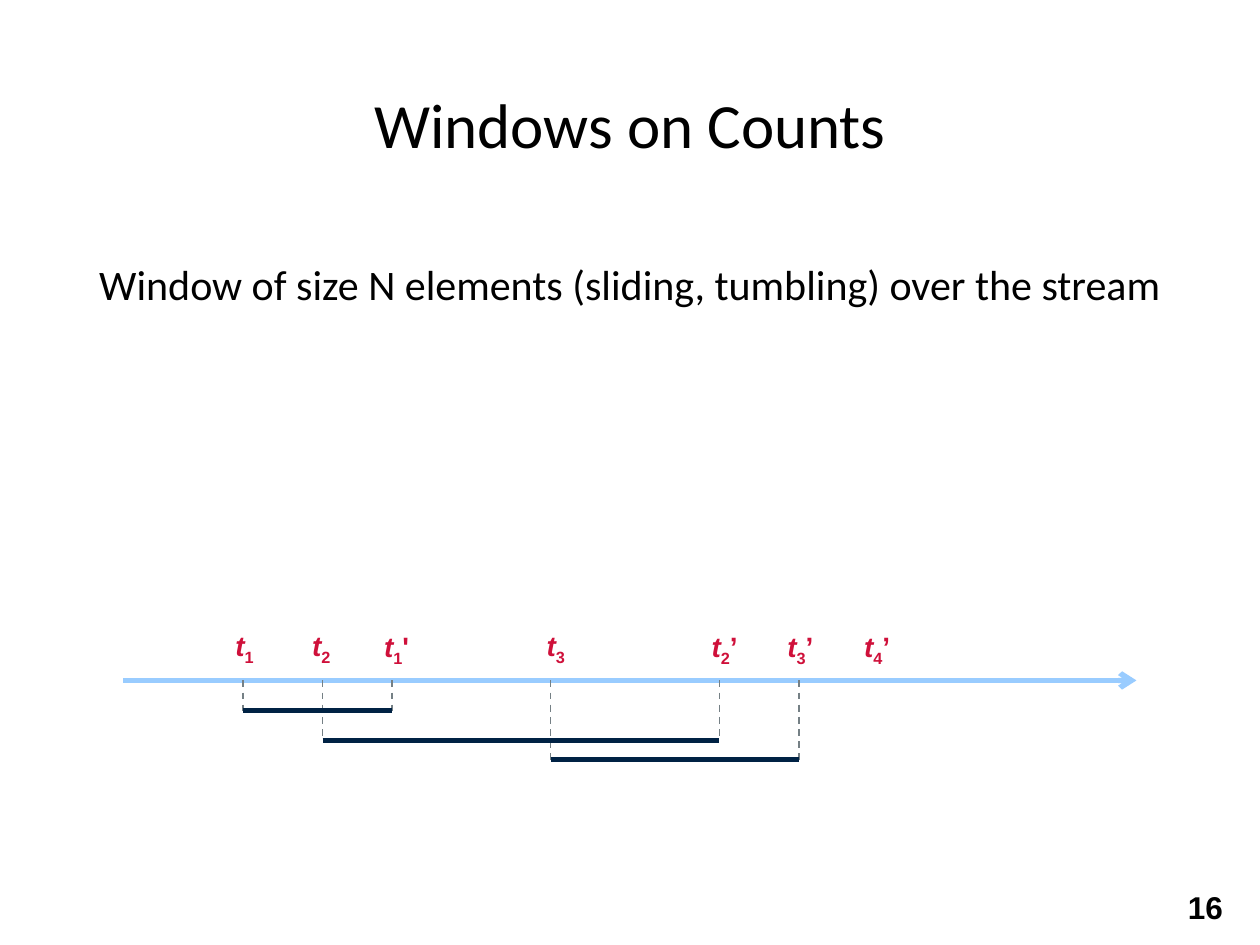
from lxml import etree
from pptx import Presentation
from pptx.dml.color import RGBColor
from pptx.enum.dml import MSO_LINE
from pptx.enum.shapes import MSO_CONNECTOR
from pptx.enum.text import MSO_ANCHOR, MSO_AUTO_SIZE, PP_ALIGN
from pptx.oxml.ns import qn
from pptx.util import Pt

# Content, lengths in px (100 px to the inch)
TITLE = "Windows on Counts"
BODY = "Window of size N elements (sliding, tumbling) over the stream"
PAGE = "16"
AXIS = (98, 902, 540)  # left, right, y
WINDOWS = [(193, 311, 564), (256, 571, 588), (437, 634, 603)]  # start, end, y
STARTS = [("1", "", 177), ("2", "", 238), ("3", "", 424)]  # index, prime, left
ENDS = [("1", "'", 295), ("2", "’", 555), ("3", "’", 615), ("4", "’", 676)]
COLORS = {"text": "000000", "label": "CF103A", "axis": "99CCFF",
          "tick": "758085", "window": "002244"}
PX = 9144


def px(*values):
    return [v * PX for v in values]


def style(r, font, size, color, bold=False, italic=False):
    f = r.font
    f.name, f.size, f.bold, f.italic = font, Pt(size), bold, italic
    f.color.rgb = RGBColor.from_string(COLORS[color])


def fill_placeholder(sp, text, box, size, anchor):
    sp.left, sp.top, sp.width, sp.height = px(*box)
    tf = sp.text_frame
    tf.text = text
    tf.vertical_anchor = anchor
    p = tf.paragraphs[0]
    p.alignment = PP_ALIGN.CENTER
    p.space_before = Pt(0)
    style(p.runs[0], "Calibri", size, "text")
    return p


def add_line(x1, y1, x2, y2, color, width, dash=None):
    line = s.shapes.add_connector(MSO_CONNECTOR.STRAIGHT, *px(x1, y1, x2, y2))
    line.line.color.rgb = RGBColor.from_string(COLORS[color])
    line.line.width = Pt(width)
    if dash:
        line.line.dash_style = dash
    etree.SubElement(line._element.spPr, qn("a:effectLst"))
    return line


def add_label(index, prime, left, top, width):
    tf = s.shapes.add_textbox(*px(left, top, width, 37)).text_frame
    tf.word_wrap = False
    tf.auto_size = MSO_AUTO_SIZE.SHAPE_TO_FIT_TEXT
    p = tf.paragraphs[0]
    for text in filter(None, ("t", index, prime)):
        r = p.add_run()
        r.text = text
        style(r, "Arial", 16, "label", bold=True, italic=text == "t")
        if text == index:
            r.font._element.set("baseline", "-25000")


prs = Presentation()
prs.slide_width, prs.slide_height = px(1000, 750)
s = prs.slides.add_slide(prs.slide_layouts[1])

# Title and statement
fill_placeholder(s.shapes.title, TITLE, (0, 60, 1000, 75), 36, MSO_ANCHOR.MIDDLE)
p = fill_placeholder(s.placeholders[1], BODY, (0, 200, 1000, 50), 24, MSO_ANCHOR.TOP)
pPr = p._p.get_or_add_pPr()
pPr.set("marL", "0")
pPr.set("indent", "0")
etree.SubElement(pPr, qn("a:buNone"))

# Time axis
left, right, axis_y = AXIS
axis = add_line(left, axis_y, right, axis_y, "axis", 3)
etree.SubElement(axis.line._get_or_add_ln(), qn("a:tailEnd"), type="arrow")

# Time labels
for index, prime, x in STARTS:
    add_label(index, prime, x, 494, 37)
for index, prime, x in ENDS:
    add_label(index, prime, x, 495, 41)

# Dashed ticks, then the windows they bound
for start, end, y in WINDOWS:
    for x in (start, end):
        add_line(x, axis_y, x, y, "tick", 1, MSO_LINE.DASH)
for start, end, y in WINDOWS:
    add_line(start, y, end, y, "window", 3)

# Page number
tf = s.shapes.add_textbox(*px(933, 700, 58, 40)).text_frame
tf.word_wrap = True
tf.text = PAGE
style(tf.paragraphs[0].runs[0], "Arial", 18, "text", bold=True)

prs.save("out.pptx")
